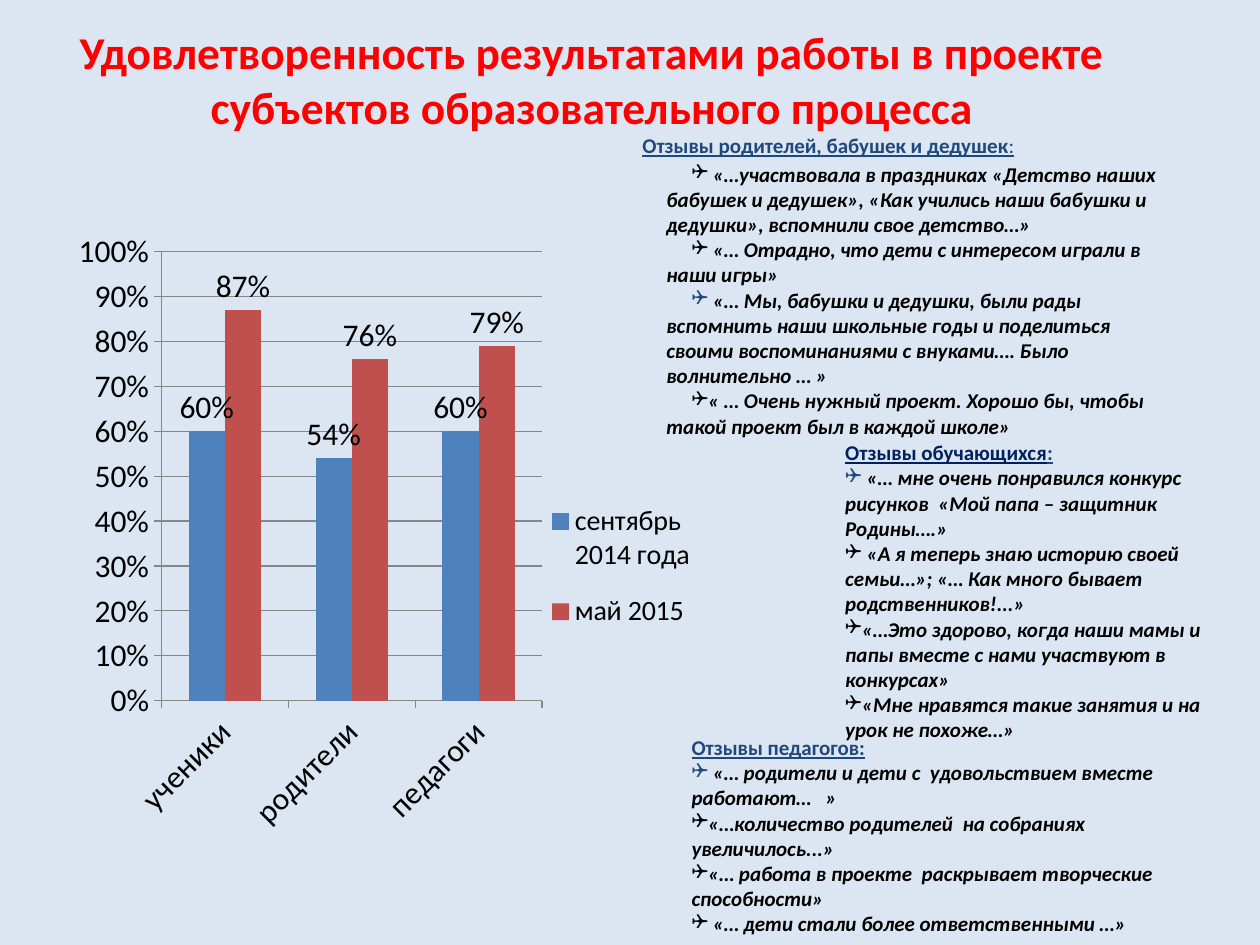
"""Build a slide with a satisfaction chart and reviews from three groups."""
from lxml import etree
from pptx import Presentation
from pptx import util as u
from pptx.chart.data import CategoryChartData
from pptx.dml.color import RGBColor
from pptx.enum import chart as ch, text
from pptx.oxml import parse_xml
from pptx.oxml.ns import nsdecls, qn

BACKGROUND = RGBColor(0xDC, 0xE6, 0xF2)
RED = RGBColor(0xFF, 0x00, 0x00)
BLACK = RGBColor(0x00, 0x00, 0x00)
BLUE = RGBColor(0x1F, 0x49, 0x7D)
NAVY = RGBColor(0x00, 0x20, 0x60)
GRAY = RGBColor(0x86, 0x86, 0x86)
SERIES_COLORS = [RGBColor(0x4F, 0x81, 0xBD), RGBColor(0xC0, 0x50, 0x4D)]

STYLES = {
    "title": ({"size": u.Pt(26), "bold": True}, RED),
    "heading": ({"size": u.Pt(12), "bold": True, "underline": True}, BLUE),
    "navy heading": ({"size": u.Pt(12), "bold": True, "underline": True}, NAVY),
    "colon": ({"size": u.Pt(12), "bold": False, "underline": True}, BLUE),
    "blue": ({"size": u.Pt(12), "bold": True, "italic": True}, BLUE),
    "quote": ({"size": u.Pt(12), "bold": True, "italic": True}, BLACK),
}

REVIEWS = [
    ((5.39, 5.78, 4.06, 1.72), "top", 0, [
        (False, [("Отзывы педагогов:", "heading")]),
        (True, [(" ", "blue"), ("«… родители и дети с  удовольствием вместе", "quote")]),
        (False, [("работают…   »", "quote")]),
        (True, [("«…количество родителей  на собраниях увеличилось...»", "quote")]),
        (True, [("«… работа в проекте  раскрывает творческие способности»", "quote")]),
        (True, [(" «… дети стали более ответственными …»", "quote")]),
    ]),
    ((6.61, 3.44, 3.39, 2.52), "top", 0, [
        (False, [("Отзывы обучающихся", "navy heading"), (":", "heading")]),
        (True, [(" ", "blue"), ("«… мне очень понравился конкурс рисунков  "
                                "«Мой папа – защитник Родины….»", "quote")]),
        (True, [(" «А я теперь знаю историю своей семьи…»; "
                 "«… Как много бывает родственников!...»", "quote")]),
        (True, [("«…Это здорово, когда наши мамы и папы вместе с нами "
                 "участвуют в конкурсах»", "quote")]),
        (True, [("«Мне нравятся такие занятия и на урок не похоже…»", "quote")]),
    ]),
    ((5, 1.23, 4.41, 2.32), "top", 0.2, [
        (True, [(" «…участвовала в праздниках «Детство наших бабушек и дедушек», "
                 "«Как учились наши бабушки и дедушки», вспомнили свое детство…»", "quote")]),
        (True, [(" «… Отрадно, что дети с интересом играли в наши игры»", "quote")]),
        (True, [(" ", "blue"), ("«… Мы, бабушки и дедушки, были рады вспомнить наши "
                                "школьные годы и поделиться своими воспоминаниями с "
                                "внуками…. Было волнительно … »", "quote")]),
        (True, [("« … Очень нужный проект. Хорошо бы, чтобы такой проект "
                 "был в каждой школе»", "quote")]),
    ]),
    ((5, 0.76, 5, 0.54), "bottom", 0, [
        (False, [("Отзывы родителей, бабушек и дедушек", "heading"), (":", "colon")]),
    ]),
]


def add_span(para, words, style):
    span = para.add_run()
    span.text = words
    values, color = STYLES[style]
    for name, value in values.items():
        setattr(span.font, name, value)
    span.font.name = "Calibri"
    span.font.color.rgb = color


def set_layout(parent, index, inner, **shares):
    for old in parent.findall(qn("c:layout")):
        parent.remove(old)
    target = '<c:layoutTarget val="inner"/>' if inner else ""
    modes = '<c:xMode val="edge"/><c:yMode val="edge"/>'
    sizes = "".join(f'<c:{name} val="{share}"/>' for name, share in shares.items())
    parent.insert(index, parse_xml(
        f'<c:layout {nsdecls("c")}><c:manualLayout>{target}{modes}{sizes}'
        '</c:manualLayout></c:layout>'))


deck = Presentation()
deck.slide_width, deck.slide_height = u.Inches(10), u.Inches(7.5)
page = deck.slides.add_slide(deck.slide_layouts[5])
page.background.fill.solid()
page.background.fill.fore_color.rgb = BACKGROUND

title = page.shapes.title
title.left, title.top, title.width, title.height = map(u.Inches, (0.2, 0, 9, 1.25))
title.text_frame.auto_size = text.MSO_AUTO_SIZE.NONE
title.text_frame.vertical_anchor = text.MSO_ANCHOR.MIDDLE
title_para = title.text_frame.paragraphs[0]
title_para.alignment = text.PP_ALIGN.CENTER
add_span(title_para, "Удовлетворенность результатами работы в проекте "
                     "субъектов образовательного процесса", "title")

for place, anchor, indent, paragraphs in REVIEWS:
    box = page.shapes.add_textbox(*map(u.Inches, place))
    frame = box.text_frame
    frame.word_wrap = True
    frame.vertical_anchor = text.MSO_ANCHOR[anchor.upper()]
    for number, (bulleted, spans) in enumerate(paragraphs):
        para = frame.add_paragraph() if number else frame.paragraphs[0]
        for words, style in spans:
            add_span(para, words, style)
        if bulleted:
            props = para._p.get_or_add_pPr()
            props.set("marL", str(u.Inches(0.19 if indent else 0)))
            props.set("indent", str(u.Inches(indent)))
            etree.SubElement(props, qn("a:buFont")).set("typeface", "Wingdings")
            etree.SubElement(props, qn("a:buChar")).set("char", "❑")

data = CategoryChartData(number_format="0%")
data.categories = ["ученики", "родители", "педагоги"]
data.add_series("сентябрь 2014 года", (0.6, 0.54, 0.6))
data.add_series("май 2015", (0.87, 0.76, 0.79))
chart = page.shapes.add_chart(ch.XL_CHART_TYPE.COLUMN_CLUSTERED,
                              *map(u.Inches, (0.5, 1.75, 5.21, 4.95)), data).chart
chart.has_title = False
chart.font.size, chart.font.name = u.Pt(18), "Calibri"
chart.font.color.rgb = BLACK

plot = chart.plots[0]
plot.gap_width, plot.overlap, plot.vary_by_categories = 150, 0, False
for series, color in zip(plot.series, SERIES_COLORS):
    series.format.fill.solid()
    series.format.fill.fore_color.rgb = color
    labels = series.data_labels
    for name, value in {"show_value": True, "number_format": "0%",
                        "number_format_is_linked": False,
                        "position": ch.XL_LABEL_POSITION.OUTSIDE_END}.items():
        setattr(labels, name, value)

values, categories = chart.value_axis, chart.category_axis
values.minimum_scale, values.maximum_scale, values.major_unit = 0, 1, 0.1
values.has_major_gridlines = True
values.tick_labels.number_format = "0%"
values.tick_labels.number_format_is_linked = False
for axis in (values, categories):
    axis.major_tick_mark = ch.XL_TICK_MARK.OUTSIDE
    axis.tick_labels.font.size = u.Pt(18)
for line in (values.format.line, categories.format.line, values.major_gridlines.format.line):
    line.color.rgb = GRAY
    line.width = u.Pt(0.75)
categories._element.find(qn("c:txPr")).find(qn("a:bodyPr")).set("rot", "-2700000")

chart.has_legend = True
chart.legend.position = ch.XL_LEGEND_POSITION.RIGHT
chart.legend.include_in_layout = False
chart.legend.font.size = u.Pt(16)
set_layout(chart._chartSpace.chart.plotArea, 0, True, x=0.15, y=0.05, w=0.58, h=0.72)
set_layout(chart.legend._element, 1, False, x=0.73, y=0.42, w=0.24, h=0.27)

deck.save("out.pptx")
